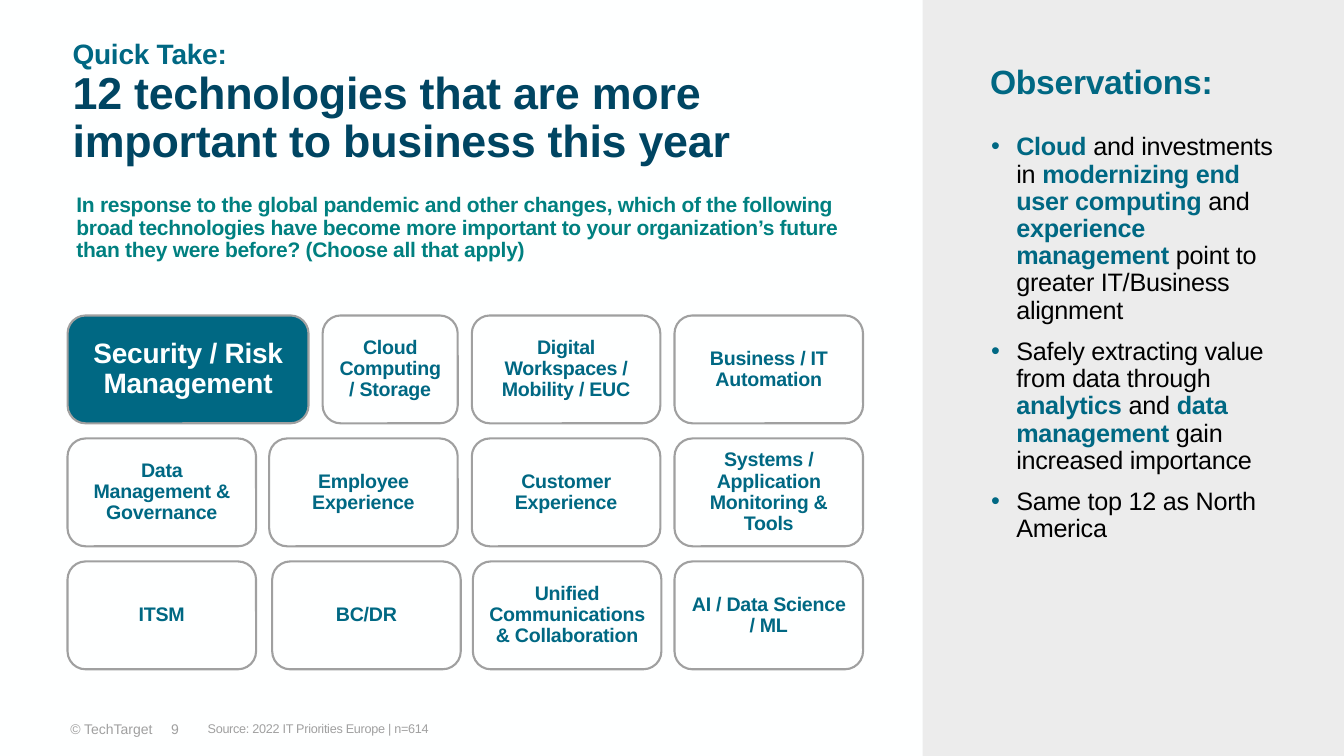
"""Build the slide on technologies that matter more this year."""
from pptx import Presentation
from pptx.dml.color import RGBColor
from pptx.enum.shapes import MSO_SHAPE as Shape
from pptx.enum.text import MSO_ANCHOR as Anchor, PP_ALIGN as Align
from pptx.oxml.ns import qn
from pptx.util import Inches, Pt
from lxml.etree import SubElement

WHITE = RGBColor(0xFE, 0xFF, 0xFF)
BLACK = RGBColor(0, 0, 0)
GREY = RGBColor(0xA0, 0xA0, 0xA0)
PALE = RGBColor(0xEC, 0xEC, 0xEC)
TEAL = RGBColor(0x00, 0x68, 0x83)
NAVY = RGBColor(0x00, 0x45, 0x62)
GREEN = RGBColor(0x00, 0x80, 0x80)


def add_box(left, top, width, height, pad=None, anchor=Anchor.TOP):
    box = slide.shapes.add_textbox(Inches(left), Inches(top), Inches(width), Inches(height))
    frame = box.text_frame
    frame.word_wrap = True
    frame.vertical_anchor = anchor
    if pad is not None:
        frame.margin_left = frame.margin_right = Inches(pad)
        frame.margin_top = frame.margin_bottom = Inches(pad)
    return frame


def add_run(para, text, size, color, bold=False, tight=True):
    run = para.add_run()
    run.text = text
    font = run.font
    font.name, font.size, font.bold = "Arial", Pt(size), bold
    font.color.rgb = color
    if tight:
        para.line_spacing = 0.9
        run._r.get_or_add_rPr().set("spc", "-20")


deck = Presentation()
deck.slide_width, deck.slide_height = Inches(13.33), Inches(7.5)
slide = deck.slides.add_slide(deck.slide_layouts[6])
slide.background.fill.solid()
slide.background.fill.fore_color.rgb = WHITE

panel = slide.shapes.add_shape(Shape.RECTANGLE, Inches(9.15), 0, Inches(4.18), Inches(7.5))
panel.shadow.inherit = False
panel.fill.solid()
panel.fill.fore_color.rgb = PALE
panel.line.fill.background()

owner = add_box(0.47, 7.1, 1.14, 0.27).paragraphs[0]
owner.alignment = Align.RIGHT
add_run(owner, "© TechTarget", 10, GREY, tight=False)
number = add_box(1.6, 7.1, 0.58, 0.27).paragraphs[0]
add_run(number, "9", 10, GREY, tight=False)
source = add_box(2.01, 7.12, 6.9, 0.36, 0.05).paragraphs[0]
add_run(source, "Source: 2022 IT Priorities Europe | n=614", 9, GREY)

title = add_box(0.67, 0.53, 8.48, 1, 0.05, Anchor.MIDDLE).paragraphs[0]
add_run(title, "Quick Take:", 20, TEAL, True)
for line in ("12 technologies that are more", "important to business this year"):
    title.add_line_break()
    add_run(title, line, 32, NAVY, True)

query = add_box(0.66, 1.88, 8.03, 0.78).paragraphs[0]
add_run(query, "In response to the global pandemic and other changes, which of the following "
        "broad technologies have become more important to your organization’s future "
        "than they were before? (Choose all that apply)", 15, GREEN, True)

WIDE = 1.87
rows = [
    [(0.67, 2.39, "Security / Risk Management"), (3.2, 1.34, "Cloud Computing / Storage"),
     (4.68, WIDE, "Digital Workspaces / Mobility / EUC"), (6.69, WIDE, "Business / IT Automation")],
    [(0.67, WIDE, "Data Management & Governance"), (2.67, WIDE, "Employee Experience"),
     (4.68, WIDE, "Customer Experience"), (6.69, WIDE, "Systems / Application Monitoring & Tools")],
    [(0.67, WIDE, "ITSM"), (2.7, WIDE, "BC/DR"),
     (4.69, WIDE, "Unified Communications & Collaboration"), (6.69, WIDE, "AI / Data Science / ML")],
]
for i, row in enumerate(rows):
    for j, (left, width, text) in enumerate(row):
        top_pick = i == j == 0
        card = slide.shapes.add_shape(Shape.ROUNDED_RECTANGLE, Inches(left),
                                      Inches(3.13 + 1.22 * i), Inches(width), Inches(1.07))
        card.shadow.inherit = False
        card.fill.solid()
        card.fill.fore_color.rgb = TEAL if top_pick else WHITE
        card.line.color.rgb = GREY
        card.line.width = Pt(1.5)
        card.text_frame.word_wrap = True
        card.text_frame.vertical_anchor = Anchor.MIDDLE
        label = card.text_frame.paragraphs[0]
        label.alignment = Align.CENTER
        add_run(label, text, 20 if top_pick else 14, WHITE if top_pick else TEAL, True)

points = [
    [("Cloud", True), (" and investments in ", False), ("modernizing end user computing ", True),
     ("and ", False), ("experience management ", True),
     ("point to greater IT/Business alignment", False)],
    [("Safely extracting value from data through ", False), ("analytics", True), (" and ", False),
     ("data management", True), (" gain increased importance", False)],
    [("Same top 12 as North America", False)],
]
notes = add_box(9.83, 1.33, 3, 5.3, 0)
for i, point in enumerate(points):
    para = notes.add_paragraph() if i else notes.paragraphs[0]
    para.space_after = Pt(10)
    props = para._p.get_or_add_pPr()
    props.set("marL", str(Inches(0.25)))
    props.set("indent", str(-Inches(0.25)))
    tint = SubElement(props, qn("a:buClr"))
    SubElement(tint, qn("a:srgbClr")).set("val", str(TEAL))
    SubElement(props, qn("a:buFont")).set("typeface", "Arial")
    SubElement(props, qn("a:buChar")).set("char", "•")
    for text, strong in point:
        add_run(para, text, 18, TEAL if strong else BLACK, strong)

head = add_box(9.82, 0.33, 3, 1, 0, Anchor.MIDDLE).paragraphs[0]
add_run(head, "Observations:", 24, TEAL, True)

deck.save("out.pptx")
